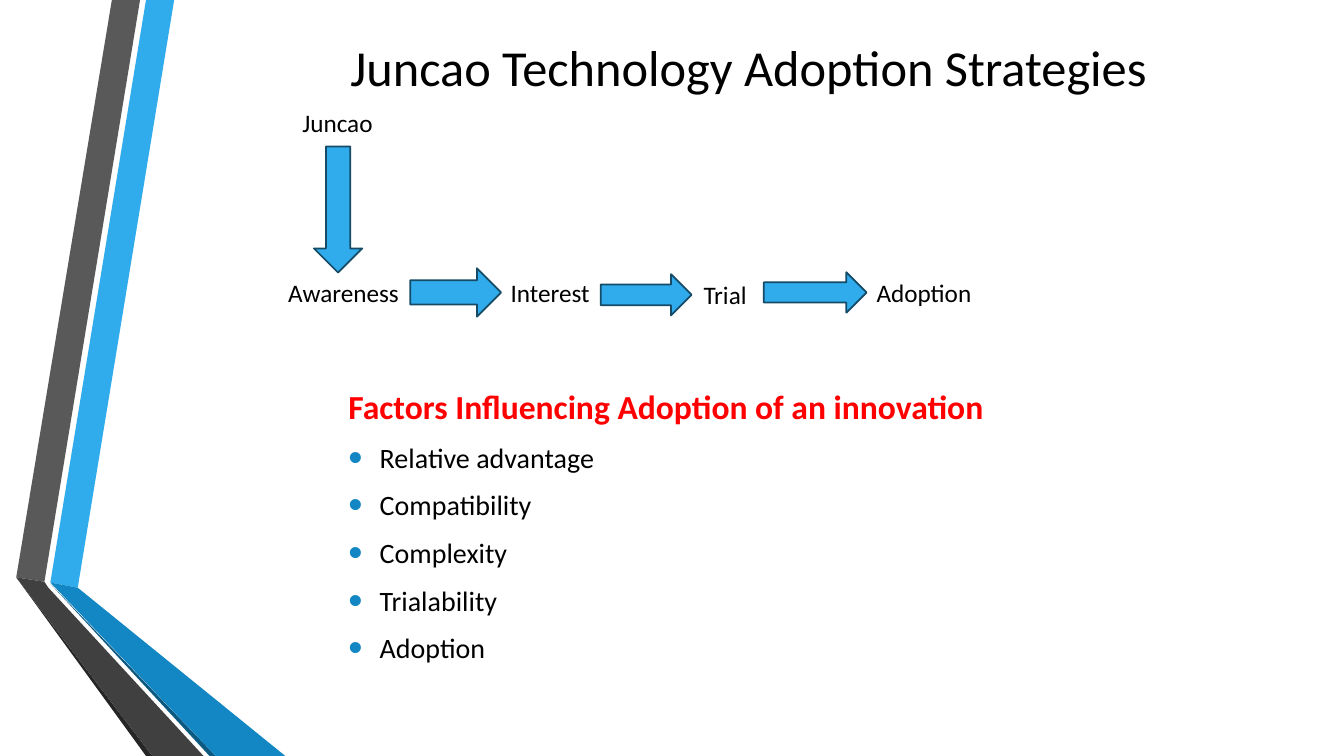
from dataclasses import dataclass

from lxml.etree import SubElement
from pptx import Presentation
from pptx.dml.color import RGBColor
from pptx.enum.shapes import MSO_SHAPE
from pptx.enum.text import MSO_ANCHOR, PP_ALIGN
from pptx.oxml.ns import qn
from pptx.util import Cm, Pt


@dataclass(frozen=True)
class Theme:
    font: str = "Calibri"
    text: str = "000000"
    heading: str = "FF0000"
    blue: str = "30ACEC"
    deep_blue: str = "1287C3"
    navy: str = "0C5A82"
    outline: str = "154B67"
    grey: str = "595959"
    dark_grey: str = "404040"
    black_grey: str = "262626"
    title_size: int = 36
    heading_size: int = 24
    bullet_size: int = 20
    label_size: int = 18
    outline_width: float = 1.25


@dataclass(frozen=True)
class Ribbon:
    color: str
    points: tuple[tuple[float, float], ...]


@dataclass(frozen=True)
class Arrow:
    x: float
    y: float
    w: float
    h: float
    rotation: int = 0


@dataclass(frozen=True)
class Label:
    text: str
    x: float
    y: float


T = Theme()
BOTTOM = 19.05

RIBBONS = (
    Ribbon(T.blue, ((1.27, 14.68), (1.96, 14.81), (4.39, 0), (3.68, 0))),
    Ribbon(T.grey, ((3.53, 0), (2.82, 0), (0.41, 14.55), (1.12, 14.66))),
    Ribbon(T.black_grey, ((0.41, 14.55), (3.68, BOTTOM), (3.84, BOTTOM))),
    Ribbon(T.navy, ((1.27, 14.71), (5.28, BOTTOM), (5.44, BOTTOM))),
    Ribbon(T.deep_blue, ((1.27, 14.68), (5.44, BOTTOM), (7.19, BOTTOM), (1.96, 14.81))),
    Ribbon(T.dark_grey, ((5.13, BOTTOM), (1.22, 14.81), (1.12, 14.66),
                         (0.41, 14.55), (3.84, BOTTOM))),
)

ARROWS = (
    Arrow(6.93, 4.67, 3.18, 1.22, 90),
    Arrow(10.34, 6.76, 2.29, 1.22),
    Arrow(15.14, 6.91, 2.29, 1.04),
    Arrow(19.25, 6.86, 2.59, 1.02),
)

LABELS = (
    Label("Juncao", 7.37, 2.57),
    Label("Awareness", 7.01, 6.86),
    Label("Interest", 12.62, 6.86),
    Label("Trial", 17.48, 6.91),
    Label("Adoption", 21.84, 6.86),
)

FACTORS = ("Relative advantage", "Compatibility", "Complexity", "Trialability", "Adoption")


def rgb(color: str) -> RGBColor:
    return RGBColor.from_string(color)


def fill_shape(sp, color: str) -> None:
    sp.shadow.inherit = False
    sp.fill.solid()
    sp.fill.fore_color.rgb = rgb(color)


def draw_ribbon(s, ribbon: Ribbon) -> None:
    start, *rest = [(Cm(x), Cm(y)) for x, y in ribbon.points]
    fb = s.shapes.build_freeform(*start)
    fb.add_line_segments(rest, close=True)
    sp = fb.convert_to_shape()
    fill_shape(sp, ribbon.color)
    sp.line.fill.background()


def draw_arrow(s, arrow: Arrow) -> None:
    sp = s.shapes.add_shape(MSO_SHAPE.RIGHT_ARROW, Cm(arrow.x), Cm(arrow.y),
                            Cm(arrow.w), Cm(arrow.h))
    sp.rotation = arrow.rotation
    fill_shape(sp, T.blue)
    sp.line.color.rgb = rgb(T.outline)
    sp.line.width = Pt(T.outline_width)


def add_box(s, x: float, y: float, w: float, h: float, anchor=MSO_ANCHOR.TOP):
    tf = s.shapes.add_textbox(Cm(x), Cm(y), Cm(w), Cm(h)).text_frame
    tf.word_wrap = True
    tf.vertical_anchor = anchor
    return tf


def write(p, text: str, *, size: int, color: str = T.text, bold: bool = False,
          align=PP_ALIGN.LEFT) -> None:
    p.alignment = align
    r = p.add_run()
    r.text = text
    r.font.name = T.font
    r.font.size = Pt(size)
    r.font.bold = bold
    r.font.color.rgb = rgb(color)


def space(p, size: int) -> None:
    p.space_before = Pt(size * 0.2)
    p.space_after = Pt(6)


def add_bullet(p) -> None:
    pPr = p._p.get_or_add_pPr()
    pPr.set("marL", str(Cm(0.79)))
    pPr.set("indent", str(-Cm(0.79)))
    SubElement(SubElement(pPr, qn("a:buClr")), qn("a:srgbClr"), val=T.deep_blue)
    SubElement(pPr, qn("a:buSzPct"), val="145000")
    SubElement(pPr, qn("a:buFont"), typeface="Arial")
    SubElement(pPr, qn("a:buChar"), char="•")


def draw_factors(s) -> None:
    tf = add_box(s, 8.53, 10.06, 22.12, 6.35, MSO_ANCHOR.MIDDLE)
    p = tf.paragraphs[0]
    write(p, "Factors Influencing Adoption of an innovation",
          size=T.heading_size, color=T.heading, bold=True)
    space(p, T.heading_size)
    for factor in FACTORS:
        p = tf.add_paragraph()
        write(p, factor, size=T.bullet_size)
        space(p, T.bullet_size)
        add_bullet(p)


def main() -> None:
    prs = Presentation()
    prs.slide_width, prs.slide_height = Cm(33.87), Cm(BOTTOM)
    s = prs.slides.add_slide(prs.slide_layouts[6])
    for ribbon in RIBBONS:
        draw_ribbon(s, ribbon)
    tf = add_box(s, 4.95, 0.51, 27.84, 2.31, MSO_ANCHOR.MIDDLE)
    write(tf.paragraphs[0], "Juncao Technology Adoption Strategies",
          size=T.title_size, align=PP_ALIGN.CENTER)
    for arrow in ARROWS:
        draw_arrow(s, arrow)
    for label in LABELS:
        tf = add_box(s, label.x, label.y, 3.56, 1.02)
        write(tf.paragraphs[0], label.text, size=T.label_size)
    draw_factors(s)
    prs.save("out.pptx")


if __name__ == "__main__":
    main()
